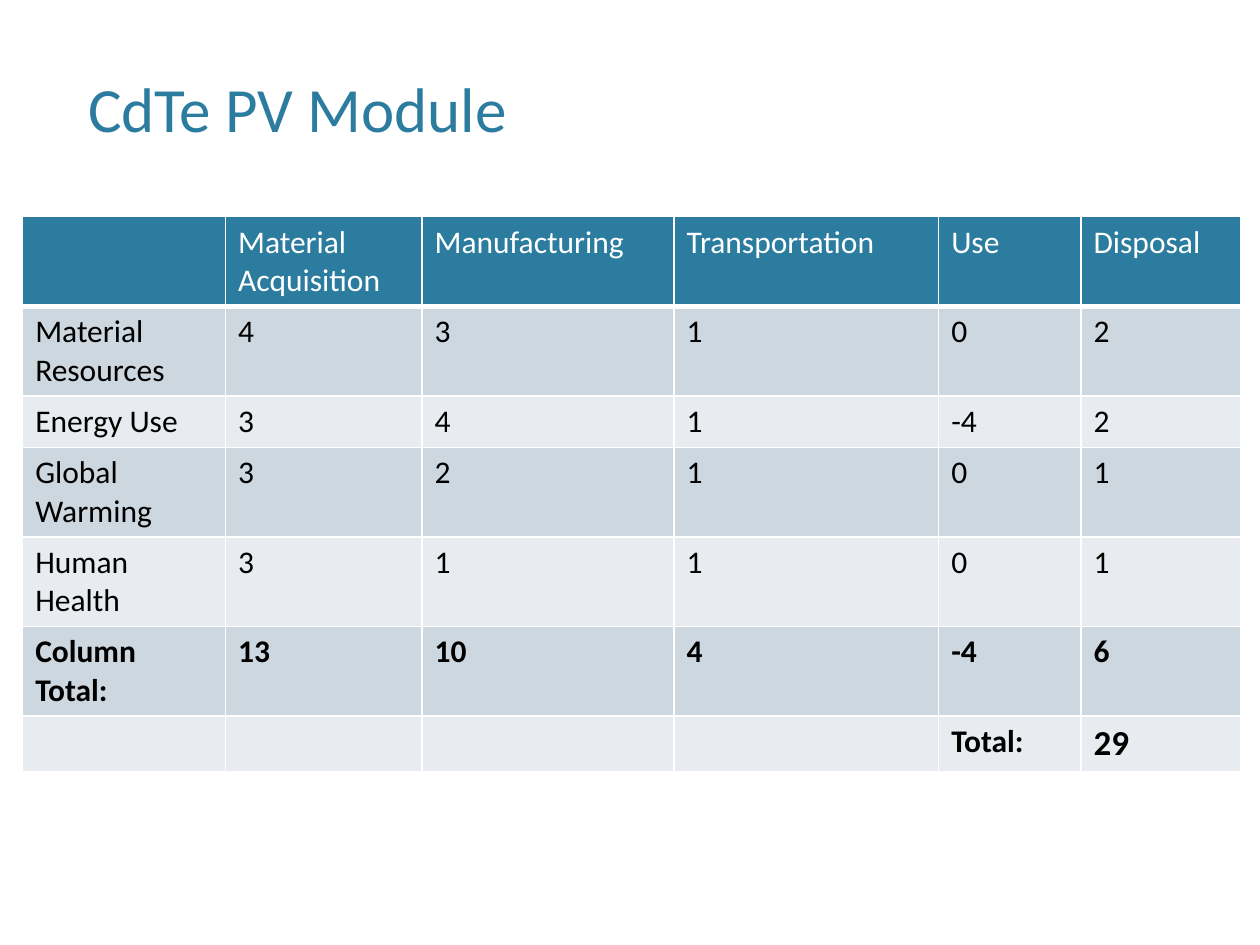
from lxml import etree
from pptx import Presentation
from pptx.dml.color import RGBColor
from pptx.enum.text import MSO_ANCHOR, PP_ALIGN
from pptx.oxml.ns import qn
from pptx.util import Inches, Pt

LEFT = PP_ALIGN.LEFT
MIDDLE = MSO_ANCHOR.MIDDLE
TITLE_ONLY = 5

FONT = "Calibri"
COLORS = {
    "accent": "2C7C9F",
    "white": "FFFFFF",
    "black": "000000",
    "odd": "CDD7DF",
    "even": "E8ECF0",
}

TITLE = "CdTe PV Module"
HEADER = ["", "Material Acquisition", "Manufacturing", "Transportation", "Use", "Disposal"]
SCORES = [
    ["Material Resources", 4, 3, 1, 0, 2],
    ["Energy Use", 3, 4, 1, -4, 2],
    ["Global Warming", 3, 2, 1, 0, 1],
    ["Human Health", 3, 1, 1, 0, 1],
]
TOTALS = [
    ["Column Total:", 13, 10, 4, -4, 6],
    ["", "", "", "", "Total:", 29],
]
ROWS = [HEADER] + SCORES + TOTALS
FIRST_TOTAL_ROW = 1 + len(SCORES)

COLUMN_WIDTHS = [1.61, 1.56, 2, 2.1, 1.13, 1.27]
ROW_HEIGHT = 0.41
BODY_SIZE, GRAND_TOTAL_SIZE, TITLE_SIZE = 18, 20, 36


def add_text(paragraph, text, size, color, bold=False):
    run = paragraph.add_run()
    run.text = str(text)
    run.font.name = FONT
    run.font.size = Pt(size)
    run.font.bold = bold
    run.font.color.rgb = RGBColor.from_string(COLORS[color])


def set_borders(cell, bottom_width):
    """Draw white borders, 1 pt wide except at the bottom."""
    properties = cell._tc.get_or_add_tcPr()
    for tag, width in (("a:lnL", 1), ("a:lnR", 1), ("a:lnT", 1), ("a:lnB", bottom_width)):
        line = etree.SubElement(properties, qn(tag), w=str(Pt(width)))
        fill = etree.SubElement(line, qn("a:solidFill"))
        etree.SubElement(fill, qn("a:srgbClr"), val=COLORS["white"])


def add_title(slide):
    title = slide.shapes.title
    title.left, title.top = Inches(0.6), Inches(0.12)
    title.width, title.height = Inches(8.8), Inches(1.46)
    title.text_frame.vertical_anchor = MIDDLE
    paragraph = title.text_frame.paragraphs[0]
    paragraph.alignment = LEFT
    add_text(paragraph, TITLE, TITLE_SIZE, "accent")


def add_score_table(slide):
    table = slide.shapes.add_table(
        len(ROWS), len(HEADER), Inches(0.18), Inches(1.72),
        Inches(sum(COLUMN_WIDTHS)), Inches(ROW_HEIGHT * len(ROWS))).table
    for column, width in zip(table.columns, COLUMN_WIDTHS):
        column.width = Inches(width)
    for row_index, values in enumerate(ROWS):
        table.rows[row_index].height = Inches(ROW_HEIGHT)
        is_header = row_index == 0
        fill = "accent" if is_header else "odd" if row_index % 2 else "even"
        for column_index, value in enumerate(values):
            cell = table.cell(row_index, column_index)
            set_borders(cell, 3 if is_header else 1)
            cell.fill.solid()
            cell.fill.fore_color.rgb = RGBColor.from_string(COLORS[fill])
            if value == "":
                continue
            is_grand_total = values is ROWS[-1] and column_index == len(HEADER) - 1
            add_text(cell.text_frame.paragraphs[0], value,
                     GRAND_TOTAL_SIZE if is_grand_total else BODY_SIZE,
                     "white" if is_header else "black",
                     bold=row_index >= FIRST_TOTAL_ROW)


def main():
    presentation = Presentation()
    presentation.slide_width, presentation.slide_height = Inches(10), Inches(7.5)
    slide = presentation.slides.add_slide(presentation.slide_layouts[TITLE_ONLY])
    add_title(slide)
    add_score_table(slide)
    presentation.save("out.pptx")


if __name__ == "__main__":
    main()
